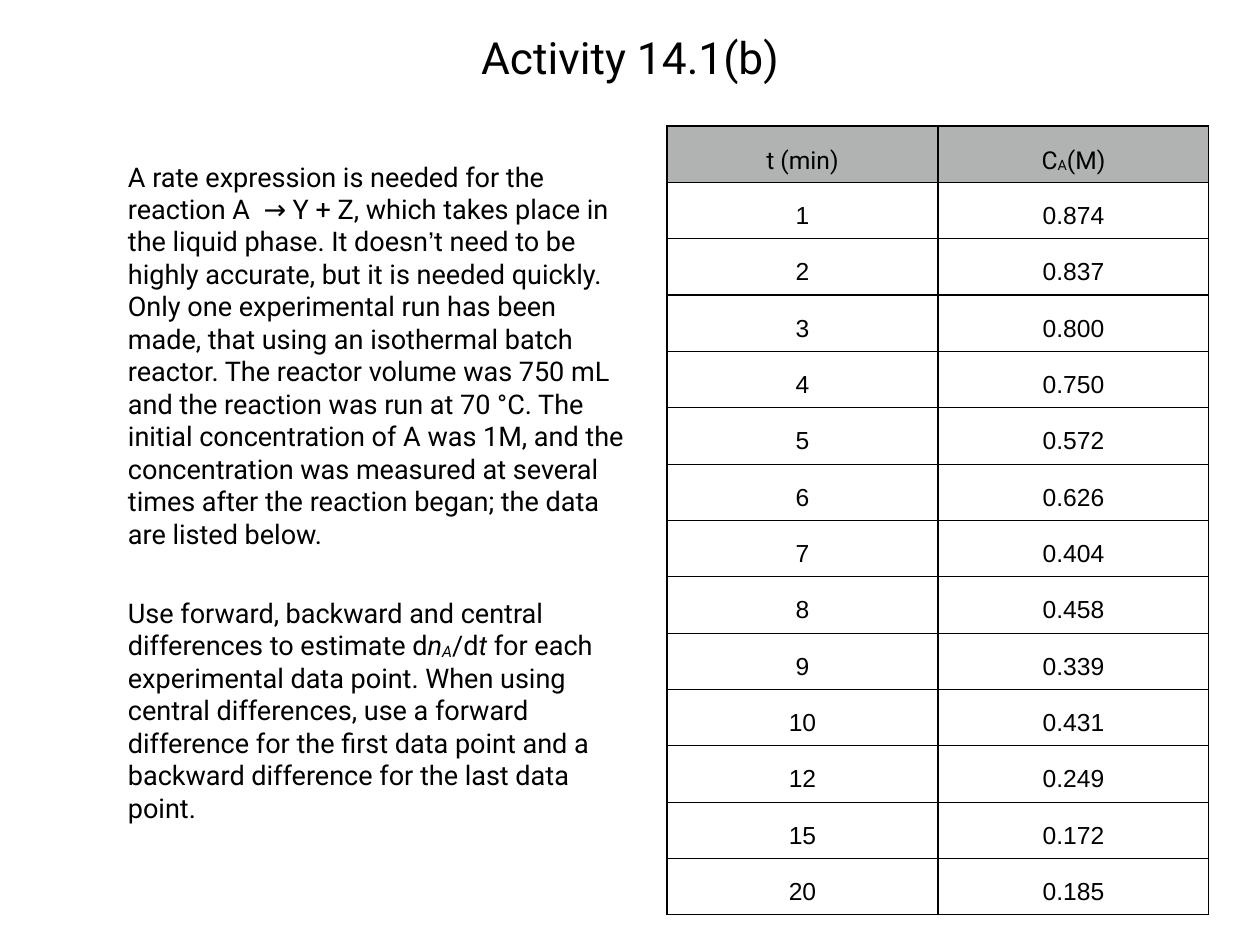
from lxml import etree
from pptx import Presentation
from pptx.dml.color import RGBColor
from pptx.enum.text import MSO_ANCHOR, PP_ALIGN
from pptx.oxml.ns import qn
from pptx.util import Emu, Pt

CENTER, LEFT = PP_ALIGN.CENTER, PP_ALIGN.LEFT
TOP = MSO_ANCHOR.TOP
PX = 10320
BLACK, WHITE, GREY = "000000", "FFFFFF", "B0B3B2"
SANS, ARIAL = "Roboto", "Arial"

# Each run is (text, style): "i" is italic, "s" subscript, "a" Arial
TITLE = [("Activity 14.1(b)", "")]
PROBLEM = [
    ("A rate expression is needed for the reaction A  → Y + Z, which takes place "
     "in the liquid phase. It doesn", ""),
    ("’", "a"),
    ("t need to be highly accurate, but it is needed quickly. Only one experimental "
     "run has been made, that using an isothermal batch reactor. The reactor volume "
     "was 750 mL and the reaction was run at 70 °C. The initial concentration of A "
     "was 1M, and the concentration was measured at several times after the reaction "
     "began; the data are listed below.", ""),
]
TASK = [
    ("Use forward, backward and central differences to estimate d", ""),
    ("n", "i"), ("A", "is"), ("/d", ""), ("t", "i"),
    (" for each experimental data point. When using central differences, use a "
     "forward difference for the first data point and a backward difference for "
     "the last data point.", ""),
]
HEADER = [[("t (min)", "")], [("C", ""), ("A", "s"), ("(M)", "")]]
DATA = [
    ("1", "0.874"), ("2", "0.837"), ("3", "0.800"), ("4", "0.750"),
    ("5", "0.572"), ("6", "0.626"), ("7", "0.404"), ("8", "0.458"),
    ("9", "0.339"), ("10", "0.431"), ("12", "0.249"), ("15", "0.172"),
    ("20", "0.185"),
]


def px(n):
    return Emu(n * PX)


def rgb(value):
    return RGBColor.from_string(value)


def add_runs(p, runs, size, align):
    p.alignment = align
    for text, style in runs:
        r = p.add_run()
        r.text = text
        r.font.size = Pt(size)
        r.font.name = ARIAL if "a" in style else SANS
        r.font.color.rgb = rgb(BLACK)
        if "i" in style:
            r.font.italic = True
        if "s" in style:
            r.font._element.set("baseline", "-6000")


def set_insets(box, n):
    box.margin_left = box.margin_right = px(n)
    box.margin_top = box.margin_bottom = px(n)


def add_text(slide, x, y, w, h, paragraphs, size, align):
    """Paragraphs are (runs, space before in points)."""
    tf = slide.shapes.add_textbox(px(x), px(y), px(w), px(h)).text_frame
    tf.word_wrap = True
    tf.vertical_anchor = TOP
    set_insets(tf, 5)
    for i, (runs, before) in enumerate(paragraphs):
        p = tf.add_paragraph() if i else tf.paragraphs[0]
        p.space_before = Pt(before)
        add_runs(p, runs, size, align)


def set_borders(cell, color):
    tc_pr = cell._tc.get_or_add_tcPr()
    for i, side in enumerate(("lnL", "lnR", "lnT", "lnB")):
        ln = etree.Element(qn("a:" + side), w=str(Pt(1)))
        fill = etree.SubElement(ln, qn("a:solidFill"))
        etree.SubElement(fill, qn("a:srgbClr"), val=color)
        tc_pr.insert(i, ln)


def fill_cell(cell, runs, fill):
    cell.fill.solid()
    cell.fill.fore_color.rgb = rgb(fill)
    cell.vertical_anchor = TOP
    set_insets(cell, 6)
    p = cell.text_frame.paragraphs[0]
    p.line_spacing = 1.5
    add_runs(p, runs, 20, CENTER)
    set_borders(cell, BLACK)


def add_data_table(slide, x, y, col_w, head_h, row_h):
    rows = [HEADER] + [[(value, "a")] for value in ()]
    rows += [[[(value, "a")] for value in pair] for pair in DATA]
    height = head_h + row_h * len(DATA)
    table = slide.shapes.add_table(
        len(rows), 2, px(x), px(y), px(2 * col_w), px(height)).table
    for col in table.columns:
        col.width = px(col_w)
    for i, cells in enumerate(rows):
        table.rows[i].height = px(row_h if i else head_h)
        for j, runs in enumerate(cells):
            fill_cell(table.cell(i, j), runs, WHITE if i else GREY)


def main():
    prs = Presentation()
    prs.slide_width, prs.slide_height = px(1260), px(945)
    slide = prs.slides.add_slide(prs.slide_layouts[6])

    # Title
    add_text(slide, 123, 25, 1014, 123, [(TITLE, 0)], 36, CENTER)

    # Problem statement and task
    add_text(slide, 123, 155, 507, 708, [(PROBLEM, 6), (TASK, 38)], 22, LEFT)

    # Measured concentrations
    add_data_table(slide, 667, 126, 271, 56, 53)

    prs.save("out.pptx")


if __name__ == "__main__":
    main()
